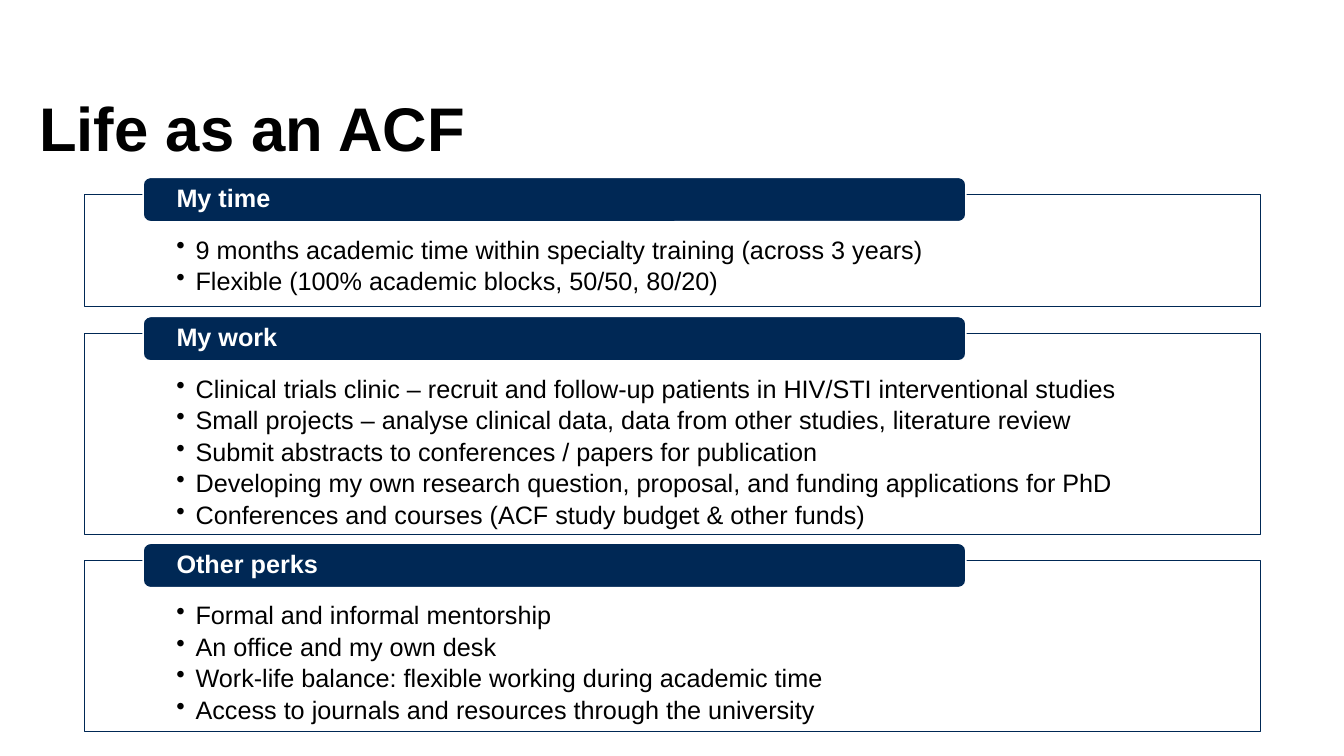
"""Builds the "Life as an ACF" slide with three headed sections."""
from lxml.etree import SubElement
from pptx import Presentation
from pptx.dml.color import RGBColor
from pptx.enum.shapes import MSO_SHAPE
from pptx.enum.text import MSO_ANCHOR as Anchor, MSO_AUTO_SIZE as AutoSize, PP_ALIGN as Align
from pptx.oxml.ns import qn
from pptx.util import Inches, Pt

COLOURS = {"navy": "002855", "white": "FFFFFF", "black": "000000"}
SECTIONS = [
    ("My time", 1.93, 1.11, [
        "9 months academic time within specialty training (across 3 years)",
        "Flexible (100% academic blocks, 50/50, 80/20)",
    ]),
    ("My work", 3.31, 1.99, [
        "Clinical trials clinic – recruit and follow-up patients in HIV/STI interventional studies",
        "Small projects – analyse clinical data, data from other studies, literature review",
        "Submit abstracts to conferences / papers for publication",
        "Developing my own research question, proposal, and funding applications for PhD",
        "Conferences and courses (ACF study budget & other funds)",
    ]),
    ("Other perks", 5.56, 1.7, [
        "Formal and informal mentorship",
        "An office and my own desk",
        "Work-life balance: flexible working during academic time",
        "Access to journals and resources through the university",
    ]),
]


def add_panel(preset, place, fill, line):
    panel = slide.shapes.add_shape(preset, *map(Inches, place))
    panel.shadow.inherit = False
    panel.fill.solid()
    panel.fill.fore_color.rgb = RGBColor.from_string(COLOURS[fill])
    panel.line.color.rgb = RGBColor.from_string(COLOURS[line])
    panel.line.width = Pt(1)
    return panel


def write(frame, lines, margins, anchor, size, colour, bold=False, bullet=None, **spacing):
    left, top, right, bottom = map(Inches, margins)
    layout = {"margin_left": left, "margin_top": top, "margin_right": right,
              "margin_bottom": bottom, "vertical_anchor": anchor,
              "word_wrap": True, "auto_size": AutoSize.NONE}
    for key, value in layout.items():
        setattr(frame, key, value)
    for index, line in enumerate(lines):
        paragraph = frame.paragraphs[0] if index == 0 else frame.add_paragraph()
        paragraph.text = line
        for key, value in {"alignment": Align.LEFT, **spacing}.items():
            setattr(paragraph, key, value)
        if bullet:
            properties = paragraph._p.get_or_add_pPr()
            properties.set("marL", str(Inches(0.19)))
            properties.set("indent", str(-Inches(0.19)))
            SubElement(properties, qn("a:buChar")).set("char", bullet)
        font = paragraph.runs[0].font
        for key, value in {"name": "Arial", "size": Pt(size), "bold": bold}.items():
            setattr(font, key, value)
        font.color.rgb = RGBColor.from_string(COLOURS[colour])


deck = Presentation()
deck.slide_width, deck.slide_height = Inches(13.33), Inches(7.5)
slide = deck.slides.add_slide(deck.slide_layouts[5])

title = slide.shapes.title
title.left, title.top = Inches(0.39), Inches(0.98)
title.width, title.height = Inches(9.84), Inches(1.5)
write(title.text_frame, ["Life as an ACF"], (0, 0, 0, 0), Anchor.TOP, 44, "black",
      bold=True, line_spacing=0.9)

for heading, top, height, points in SECTIONS:
    section = add_panel(MSO_SHAPE.RECTANGLE, (0.84, top, 11.66, height), "white", "navy")
    section_colour = section.fill._xPr.find(".//" + qn("a:srgbClr"))
    SubElement(section_colour, qn("a:alpha")).set("val", "90000")
    write(section.text_frame, points, (0.91, 0.39, 0.91, 0.14), Anchor.TOP, 18, "black",
          bullet="•", level=1, space_after=Pt(0.9))
    banner = add_panel(MSO_SHAPE.ROUNDED_RECTANGLE, (1.42, top - 0.17, 8.16, 0.44),
                       "navy", "white")
    write(banner.text_frame, [heading], (0.31, 0, 0.31, 0), Anchor.MIDDLE, 18, "white",
          bold=True, line_spacing=0.9)

deck.save("out.pptx")
